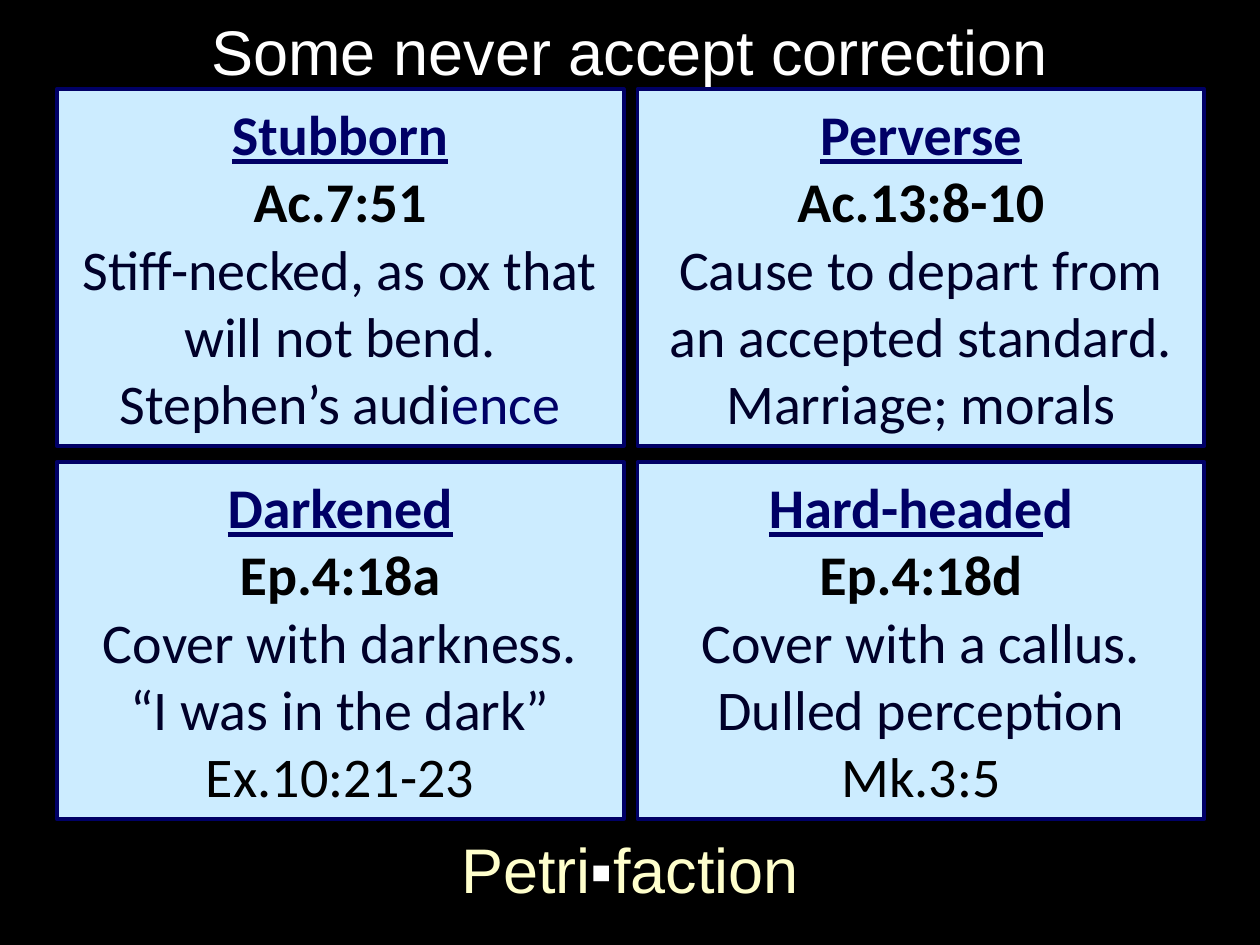
import pptx
import pptx.dml.color
import pptx.enum.shapes
import pptx.enum.text
import pptx.util

Inches, Pt = pptx.util.Inches, pptx.util.Pt
ANCHOR = pptx.enum.text.MSO_ANCHOR

COLORS = {
    "black": "000000", "white": "FFFFFF", "cream": "FFFFCC",
    "navy": "000066", "ink": "000029", "card": "CCECFF",
}

TITLE = "Some never accept correction"
FOOTER = [("Petri", "cream"), ("▪", "white"), ("faction", "cream")]

# Each card: underlined heading, rest of the heading, verse, then lines of (text, color) runs.
CARDS = [
    ("Stubborn", "", "Ac.7:51", [
        [("Stiff-necked, as ox that will not bend.", "ink")],
        [("Stephen’s audi", "ink"), ("ence", "navy")]]),
    ("Perverse", "", "Ac.13:8-10", [
        [("Cause to depart from an accepted standard.", "ink")],
        [("Marriage; morals", "ink")]]),
    ("Darkened", "", "Ep.4:18a", [
        [("Cover with darkness.", "ink")],
        [("“I was in the dark”", "ink")],
        [("Ex.10:21-23", "black")]]),
    ("Hard-heade", "d", "Ep.4:18d", [
        [("Cover with a callus.", "ink")],
        [("Dulled perception", "ink")],
        [("Mk.3:5", "black")]]),
]
COLUMNS = 2
CARD_LEFT, CARD_TOP = 0.45, 0.71
CARD_WIDTH, CARD_HEIGHT = 4.5, 2.83
GAP_X, GAP_Y = 0.11, 0.13


def rgb(name):
    return pptx.dml.color.RGBColor.from_string(COLORS[name])


def paint(shape, fill, line, width):
    shape.fill.solid()
    shape.fill.fore_color.rgb = rgb(fill)
    shape.line.color.rgb = rgb(line)
    shape.line.width = Pt(width)


def write_line(paragraph, runs, font_name, size, bold=False):
    """Fill a centred paragraph with (text, color) runs and return the runs."""
    paragraph.alignment = pptx.enum.text.PP_ALIGN.CENTER
    paragraph.font.name = font_name
    paragraph.font.size = Pt(size)
    paragraph.font.bold = bold
    written = []
    for text, color in runs:
        run = paragraph.add_run()
        run.text = text
        run.font.color.rgb = rgb(color)
        written.append(run)
    return written


def add_card(slide, index, heading, heading_end, verse, body):
    row, column = divmod(index, COLUMNS)
    card = slide.shapes.add_shape(
        pptx.enum.shapes.MSO_SHAPE.RECTANGLE,
        Inches(CARD_LEFT + column * (CARD_WIDTH + GAP_X)),
        Inches(CARD_TOP + row * (CARD_HEIGHT + GAP_Y)),
        Inches(CARD_WIDTH), Inches(CARD_HEIGHT))
    card.shadow.inherit = False
    paint(card, "card", "navy", 2.25)
    frame = card.text_frame
    frame.word_wrap = True
    frame.vertical_anchor = ANCHOR.MIDDLE

    heading_runs = [(text, "navy") for text in (heading, heading_end) if text]
    written = write_line(frame.paragraphs[0], heading_runs, "Calibri", 32, bold=True)
    written[0].font.underline = True
    write_line(frame.add_paragraph(), [(verse, "black")], "Calibri", 32, bold=True)
    for runs in body:
        write_line(frame.add_paragraph(), runs, "Calibri", 32)


def main():
    presentation = pptx.Presentation()
    presentation.slide_width, presentation.slide_height = Inches(10), Inches(7.5)
    slide = presentation.slides.add_slide(presentation.slide_layouts[5])
    slide.background.fill.solid()
    slide.background.fill.fore_color.rgb = rgb("black")

    title = slide.shapes.title
    title.left, title.top = Inches(0), Inches(0)
    title.width, title.height = Inches(10), Inches(0.67)
    paint(title, "black", "black", 0.75)
    frame = title.text_frame
    frame.auto_size = pptx.enum.text.MSO_AUTO_SIZE.NONE
    frame.vertical_anchor = ANCHOR.TOP
    frame.margin_top, frame.margin_bottom = Inches(0.1), Inches(0)
    write_line(frame.paragraphs[0], [(TITLE, "white")], "Arial", 36)

    for index, card in enumerate(CARDS):
        add_card(slide, index, *card)

    footer = slide.shapes.add_textbox(Inches(0.42), Inches(6.54), Inches(9.16), Inches(0.71))
    footer.text_frame.word_wrap = True
    footer.text_frame.auto_size = pptx.enum.text.MSO_AUTO_SIZE.SHAPE_TO_FIT_TEXT
    write_line(footer.text_frame.paragraphs[0], FOOTER, "Arial", 36)

    presentation.save("out.pptx")


if __name__ == "__main__":
    main()
